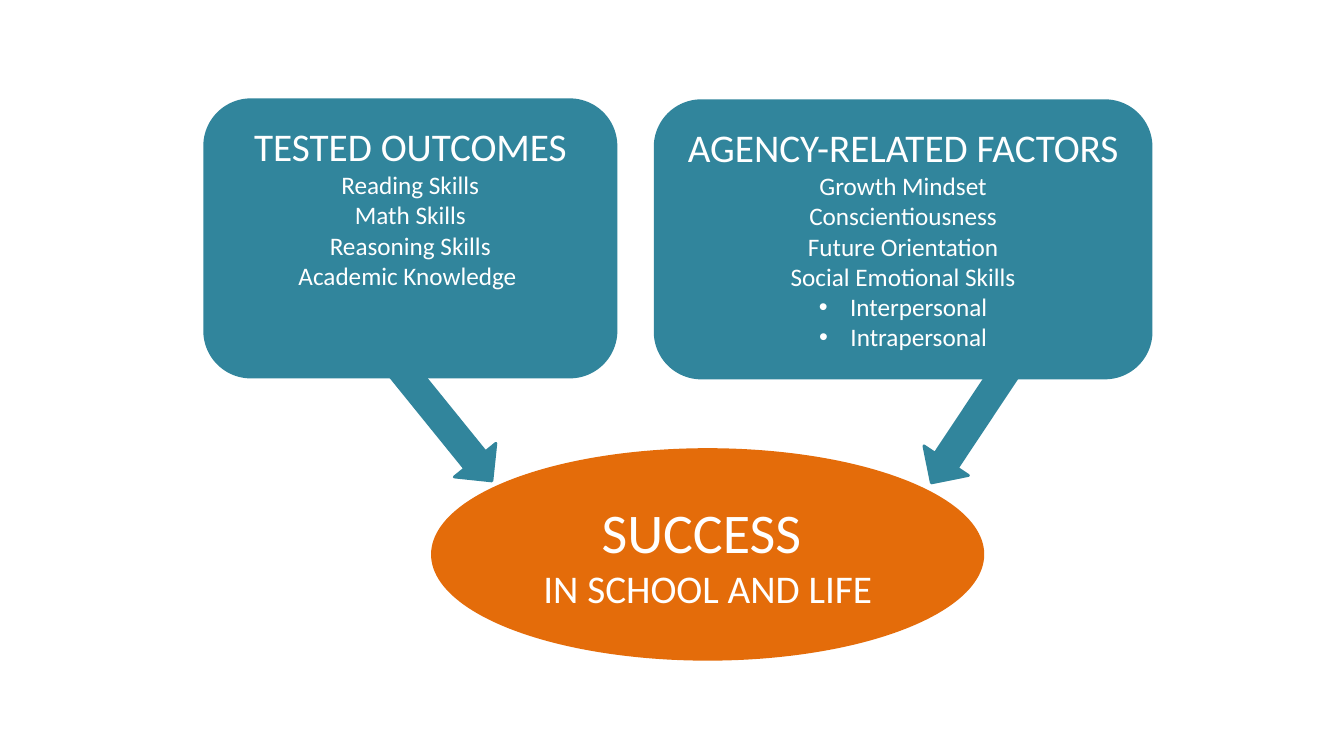
from dataclasses import dataclass

from lxml import etree
from pptx import Presentation
from pptx import util as u
from pptx.dml.color import RGBColor
from pptx.enum import shapes, text
from pptx.oxml import ns

TEAL = "31859C"
ORANGE = "E46C0A"
WHITE = "FFFFFF"
FONT = "Calibri"
PAGE_WIDTH = u.Inches(13.333)
PAGE_HEIGHT = u.Inches(7.5)
BULLET_INDENT = u.Inches(0.31)


@dataclass(frozen=True)
class Line:
    words: str
    size: int = 18
    bullet: bool = False


@dataclass(frozen=True)
class Block:
    kind: shapes.MSO_SHAPE
    left: float
    top: float
    width: float
    height: float
    color: str = TEAL
    rotation: float = 0
    lines: tuple[Line, ...] = ()
    anchor: text.MSO_ANCHOR = text.MSO_ANCHOR.MIDDLE


BLOCKS = (
    Block(
        shapes.MSO_SHAPE.ROUNDED_RECTANGLE, 15.23, 13.2, 30.6, 36.67,
        lines=(
            Line("TESTED OUTCOMES", 28),
            Line("Reading Skills"),
            Line("Math Skills"),
            Line("Reasoning Skills"),
            Line("Academic Knowledge "),
        ),
        anchor=text.MSO_ANCHOR.TOP,
    ),
    Block(
        shapes.MSO_SHAPE.ROUNDED_RECTANGLE, 48.75, 13.33, 36.9, 36.67,
        lines=(
            Line("AGENCY-RELATED FACTORS", 28),
            Line("Growth Mindset"),
            Line("Conscientiousness"),
            Line("Future Orientation"),
            Line("Social Emotional Skills"),
            Line("Interpersonal", bullet=True),
            Line("Intrapersonal", bullet=True),
        ),
        anchor=text.MSO_ANCHOR.TOP,
    ),
    Block(shapes.MSO_SHAPE.DOWN_ARROW, 72, 36.27, 3.98, 30.13, rotation=33.6),
    Block(
        shapes.MSO_SHAPE.OVAL, 32.18, 59.47, 40.95, 27.73, ORANGE,
        lines=(Line("SUCCESS ", 40), Line("IN SCHOOL AND LIFE", 28)),
    ),
    Block(shapes.MSO_SHAPE.DOWN_ARROW, 30.6, 43.47, 3.98, 22.67, rotation=321),
)


def paint(target, color: str) -> None:
    target.solid()
    target.fore_color.rgb = RGBColor.from_string(color)


def across(share: float) -> int:
    return round(PAGE_WIDTH * share / 100)


def down(share: float) -> int:
    return round(PAGE_HEIGHT * share / 100)


def add_bullet(para) -> None:
    properties = para._p.get_or_add_pPr()
    properties.set("marL", str(BULLET_INDENT))
    properties.set("indent", str(-BULLET_INDENT))
    font = etree.SubElement(properties, ns.qn("a:buFont"))
    font.set("typeface", "Arial")
    mark = etree.SubElement(properties, ns.qn("a:buChar"))
    mark.set("char", "•")


def write_lines(frame, block: Block) -> None:
    frame.word_wrap = True
    frame.vertical_anchor = block.anchor
    if block.anchor == text.MSO_ANCHOR.TOP:
        frame.margin_top = u.Inches(0.09)
    frame.text = "\n".join(line.words for line in block.lines)
    for para, line in zip(frame.paragraphs, block.lines):
        para.alignment = text.PP_ALIGN.CENTER
        if line.bullet:
            add_bullet(para)
        for span in para.runs:
            span.font.name = FONT
            span.font.size = u.Pt(line.size)
            paint(span.font.fill, WHITE)


def draw_block(page, block: Block) -> None:
    box = page.shapes.add_shape(
        block.kind,
        across(block.left), down(block.top),
        across(block.width), down(block.height),
    )
    box.rotation = block.rotation
    box.shadow.inherit = False
    paint(box.fill, block.color)
    paint(box.line.fill, block.color)
    box.line.width = u.Pt(2)
    if block.lines:
        write_lines(box.text_frame, block)


def main() -> None:
    deck = Presentation()
    deck.slide_width = PAGE_WIDTH
    deck.slide_height = PAGE_HEIGHT
    page = deck.slides.add_slide(deck.slide_layouts[6])
    for block in BLOCKS:
        draw_block(page, block)
    deck.save("out.pptx")


if __name__ == "__main__":
    main()
